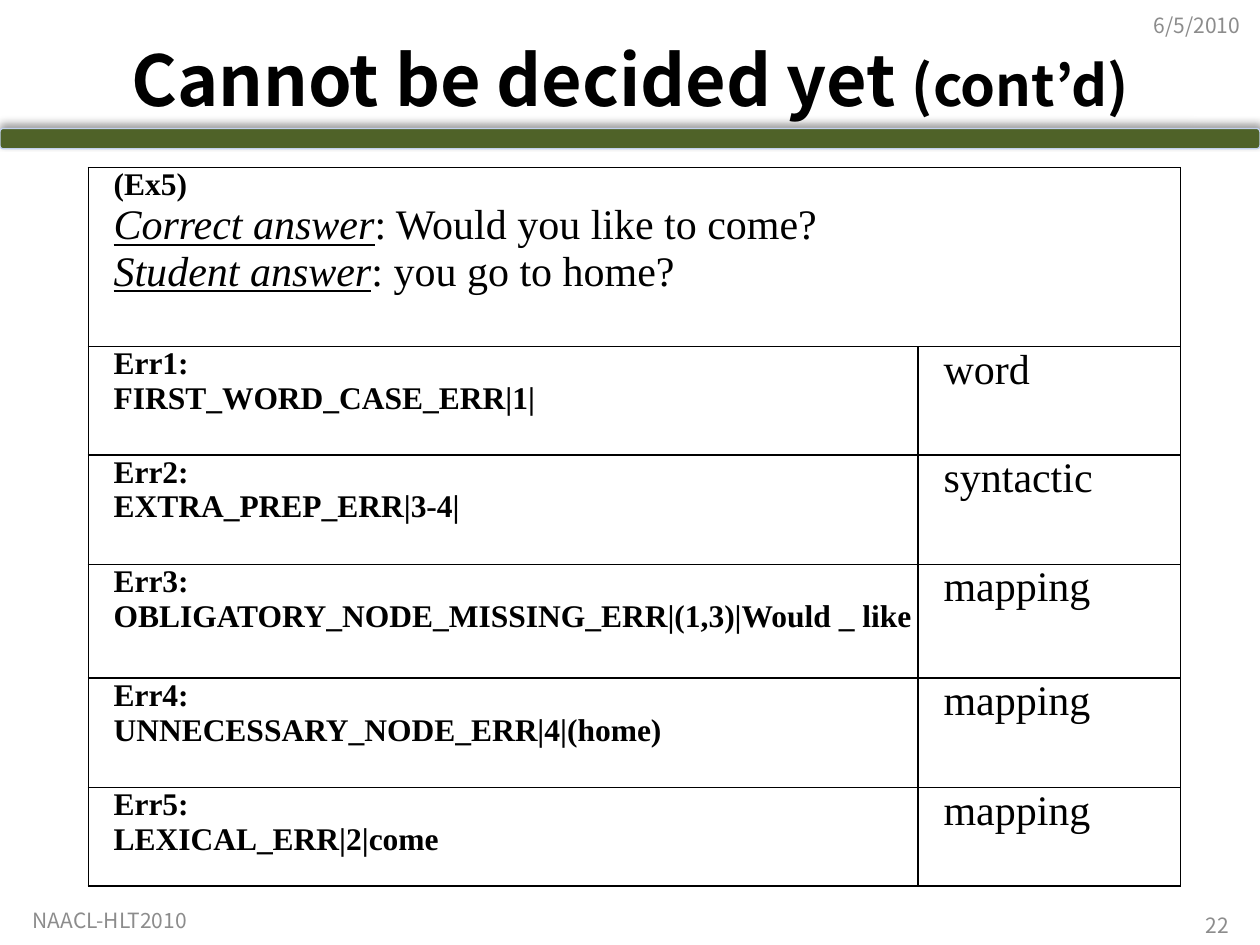
from dataclasses import dataclass

from lxml import etree
from pptx import Presentation
from pptx.dml.color import RGBColor
from pptx.enum import shapes, text
from pptx.oxml import parse_xml
from pptx.oxml.ns import qn
from pptx.util import Cm, Pt

COLORS = {"ink": "000000", "muted": "8C8C8C", "band": "4F6228", "band_line": "C2D1ED"}
SANS, SERIF = "Noto Sans CJK KR", "Times New Roman"
NS = 'xmlns:a="http://schemas.openxmlformats.org/drawingml/2006/main"'
ALIGN = text.PP_ALIGN


@dataclass
class Label:
    words: str
    left: float
    top: float
    width: float
    height: float
    align: ALIGN = ALIGN.LEFT


@dataclass
class ErrorRow:
    name: str
    code: str
    level: str
    height: float


LABELS = [
    Label("6/5/2010", 23.01, 0, 2.39, 1.02),
    Label("NAACL-HLT2010", 0.41, 18.06, 8.23, 0.99),
    Label("22", 18.21, 18.26, 6.81, 0.79, ALIGN.RIGHT),
]
ERRORS = [
    ErrorRow("Err1:", "FIRST_WORD_CASE_ERR|1|", "word", 2.18),
    ErrorRow("Err2:", "EXTRA_PREP_ERR|3-4|", "syntactic", 2.21),
    ErrorRow("Err3:", "OBLIGATORY_NODE_MISSING_ERR|(1,3)|Would _ like", "mapping", 2.29),
    ErrorRow("Err4:", "UNNECESSARY_NODE_ERR|4|(home)", "mapping", 2.21),
    ErrorRow("Err5:", "LEXICAL_ERR|2|come", "mapping", 1.98),
]
ANSWERS = [
    ("Correct answer", ": Would you like to come?"),
    ("Student answer", ": you go to home?"),
]
EXAMPLE_HEIGHT = 3.61
COLUMN_WIDTHS = [16.73, 5.29]


def add_span(para, words: str, *, size: float, font: str = SERIF, color: str = "ink",
             bold: bool = False, italic: bool = False, underline: bool = False) -> None:
    span = para.add_run()
    span.text = words
    style = span.font
    style.size, style.name = Pt(size), font
    style.bold, style.italic, style.underline = bold, italic, underline
    style.color.rgb = RGBColor.from_string(COLORS[color])
    east_asian = etree.SubElement(span._r.get_or_add_rPr(), qn("a:ea"))
    east_asian.set("typeface", font)


def add_band(page) -> None:
    band = page.shapes.add_shape(
        shapes.MSO_SHAPE.ROUNDED_RECTANGLE, 0, Cm(2.59), Cm(25.4), Cm(0.41))
    band.fill.solid()
    band.fill.fore_color.rgb = RGBColor.from_string(COLORS["band"])
    band.line.color.rgb = RGBColor.from_string(COLORS["band_line"])
    band.line.width = 0
    band._element.spPr.append(parse_xml(
        f'<a:effectLst {NS}><a:outerShdw blurRad="{Pt(4)}" dist="{Pt(3)}" dir="16200000" '
        f'rotWithShape="0"><a:srgbClr val="{COLORS["ink"]}"><a:alpha val="40000"/>'
        '</a:srgbClr></a:outerShdw></a:effectLst>'))


def set_title(page) -> None:
    title = page.shapes.title
    title.left, title.top, title.width, title.height = Cm(1.27), Cm(0.58), Cm(22.86), Cm(2.01)
    title.text_frame.vertical_anchor = text.MSO_ANCHOR.MIDDLE
    para = title.text_frame.paragraphs[0]
    para.alignment = ALIGN.CENTER
    add_span(para, "Cannot be decided yet ", size=40, font=SANS, bold=True)
    add_span(para, "(cont’d)", size=32, font=SANS, bold=True)


def add_label(page, label: Label) -> None:
    box = page.shapes.add_textbox(
        Cm(label.left), Cm(label.top), Cm(label.width), Cm(label.height))
    frame = box.text_frame
    frame.word_wrap = True
    frame.vertical_anchor = text.MSO_ANCHOR.MIDDLE
    para = frame.paragraphs[0]
    para.alignment = label.align
    add_span(para, label.words, size=12, font=SANS, color="muted")


def format_cell(cell) -> None:
    """Clear the fill, narrow the margins and draw a border on every side."""
    cell.fill.background()
    cell.margin_left = cell.margin_right = Cm(0.1)
    cell.margin_top = cell.margin_bottom = 0
    for index, side in enumerate("LRTB"):
        cell._tc.get_or_add_tcPr().insert(index, parse_xml(
            f'<a:ln{side} {NS} w="{Pt(1)}"><a:solidFill><a:srgbClr val="{COLORS["ink"]}"/>'
            f'</a:solidFill></a:ln{side}>'))


def cell_paragraphs(cell, count: int) -> list:
    """Return justified paragraphs whose first lines are indented."""
    frame = cell.text_frame
    paras = [frame.paragraphs[0]] + [frame.add_paragraph() for _ in range(count - 1)]
    for para in paras:
        para.alignment = ALIGN.JUSTIFY
        para._p.get_or_add_pPr().set("indent", str(Cm(0.41)))
    return paras


def add_error_table(page) -> None:
    heights = [EXAMPLE_HEIGHT] + [error.height for error in ERRORS]
    frame = page.shapes.add_table(
        len(heights), len(COLUMN_WIDTHS), Cm(1.78), Cm(3.38),
        Cm(sum(COLUMN_WIDTHS)), Cm(sum(heights)))
    table = frame.table
    table.first_row = table.horz_banding = False
    for column, width in zip(table.columns, COLUMN_WIDTHS):
        column.width = Cm(width)
    for row, height in zip(table.rows, heights):
        row.height = Cm(height)
    for cell in table.iter_cells():
        format_cell(cell)

    example = table.cell(0, 0)
    example.merge(table.cell(0, 1))
    heading, *answer_paras = cell_paragraphs(example, 1 + len(ANSWERS))
    add_span(heading, "(Ex5)", size=18, bold=True)
    for para, (role, sentence) in zip(answer_paras, ANSWERS):
        add_span(para, role, size=24, italic=True, underline=True)
        add_span(para, sentence, size=24)

    for index, error in enumerate(ERRORS, start=1):
        lines = (error.name, error.code)
        for para, words in zip(cell_paragraphs(table.cell(index, 0), len(lines)), lines):
            add_span(para, words, size=18, bold=True)
        add_span(cell_paragraphs(table.cell(index, 1), 1)[0], error.level, size=24)


def main() -> None:
    deck = Presentation()
    deck.slide_width, deck.slide_height = Cm(25.4), Cm(19.05)
    page = deck.slides.add_slide(deck.slide_layouts.get_by_name("Title Only"))
    add_band(page)
    set_title(page)
    for label in LABELS:
        add_label(page, label)
    add_error_table(page)
    deck.save("out.pptx")


if __name__ == "__main__":
    main()
